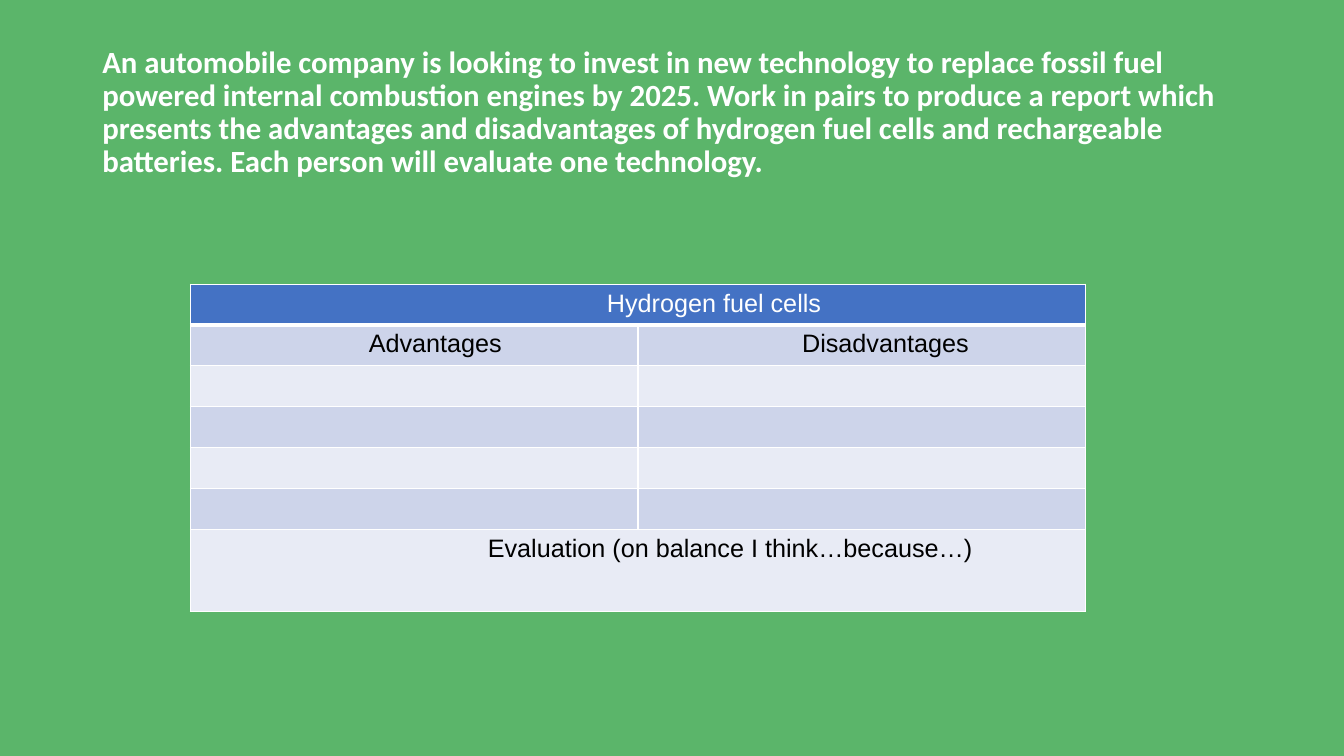
from lxml.etree import SubElement
from pptx import Presentation
from pptx.dml.color import RGBColor
from pptx.enum.text import MSO_ANCHOR as Anchor
from pptx.oxml.ns import qn
from pptx.util import Cm, Pt

TASK = (
    "An automobile company is looking to invest in new technology to replace fossil fuel "
    "powered internal combustion engines by 2025. Work in pairs to produce a report which "
    "presents the advantages and disadvantages of hydrogen fuel cells and rechargeable "
    "batteries. Each person will evaluate one technology."
)
LABELS = {
    (0, 0): ("Hydrogen fuel cells", 10.24),
    (1, 0): ("Advantages", 4.24),
    (1, 1): ("Disadvantages", 3.88),
    (6, 0): ("Evaluation (on balance I think…because…)", 7.24),
}
ROW_UNITS = [1, 1, 1, 1, 1, 1, 2]
HEADER_FILL = "4472C4"
BAND_FILLS = ["E8EBF5", "CDD4EA"]
WHITE = "FFFFFF"
BLACK = "000000"


def color(hex_string):
    """Turn a hex string into a colour."""
    return RGBColor.from_string(hex_string)


def write(frame, text, font="Arial", size=18, fill=BLACK, bold=False, indent=0, spacing=1.0):
    """Write one formatted paragraph into a text frame."""
    paragraph = frame.paragraphs[0]
    paragraph.line_spacing = spacing
    paragraph._p.get_or_add_pPr().set("marL", str(Cm(indent)))
    run = paragraph.add_run()
    run.text = text
    run.font.name = font
    run.font.size = Pt(size)
    run.font.bold = bold
    run.font.color.rgb = color(fill)


def add_borders(cell, top=1, bottom=1):
    """Draw white borders around a cell, with widths in points."""
    properties = cell._tc.get_or_add_tcPr()
    for side, width in (("L", 1), ("R", 1), ("T", top), ("B", bottom)):
        line = SubElement(properties, qn(f"a:ln{side}"), w=str(Pt(width)))
        solid = SubElement(line, qn("a:solidFill"))
        SubElement(solid, qn("a:srgbClr"), val=WHITE)


def add_task(slide, left, top, width, height):
    """Place the task description in its box."""
    frame = slide.shapes.add_textbox(Cm(left), Cm(top), Cm(width), Cm(height)).text_frame
    frame.word_wrap = True
    frame.vertical_anchor = Anchor.MIDDLE
    write(frame, TASK, font="Calibri", size=22, fill=WHITE, bold=True, spacing=0.9)


def add_report_table(slide, left, top, width, height):
    """Place the report table, sharing its box out among the rows and columns."""
    shape = slide.shapes.add_table(len(ROW_UNITS), 2, Cm(left), Cm(top), Cm(width), Cm(height))
    table = shape.table
    table.first_row = False
    table.horz_banding = False
    for row, units in zip(table.rows, ROW_UNITS):
        row.height = Cm(height * units / sum(ROW_UNITS))
    for index in range(len(ROW_UNITS)):
        for column in range(2):
            cell = table.cell(index, column)
            add_borders(cell, top=3 if index == 1 else 1, bottom=3 if index == 0 else 1)
            cell.fill.solid()
            cell.fill.fore_color.rgb = color(BAND_FILLS[index % 2] if index else HEADER_FILL)
    for index in (0, len(ROW_UNITS) - 1):
        table.cell(index, 0).merge(table.cell(index, 1))
    for (index, column), (text, indent) in LABELS.items():
        frame = table.cell(index, column).text_frame
        write(frame, text, fill=BLACK if index else WHITE, indent=indent)


def main():
    """Build and save the slide."""
    presentation = Presentation()
    presentation.slide_width = Cm(33.87)
    presentation.slide_height = Cm(19.05)
    slide = presentation.slides.add_slide(presentation.slide_layouts[6])
    slide.background.fill.solid()
    slide.background.fill.fore_color.rgb = color("5BB56A")
    add_task(slide, 2.33, 1.01, 29.21, 3.68)
    add_report_table(slide, 4.8, 7.16, 22.56, 8.24)
    presentation.save("out.pptx")


if __name__ == "__main__":
    main()
